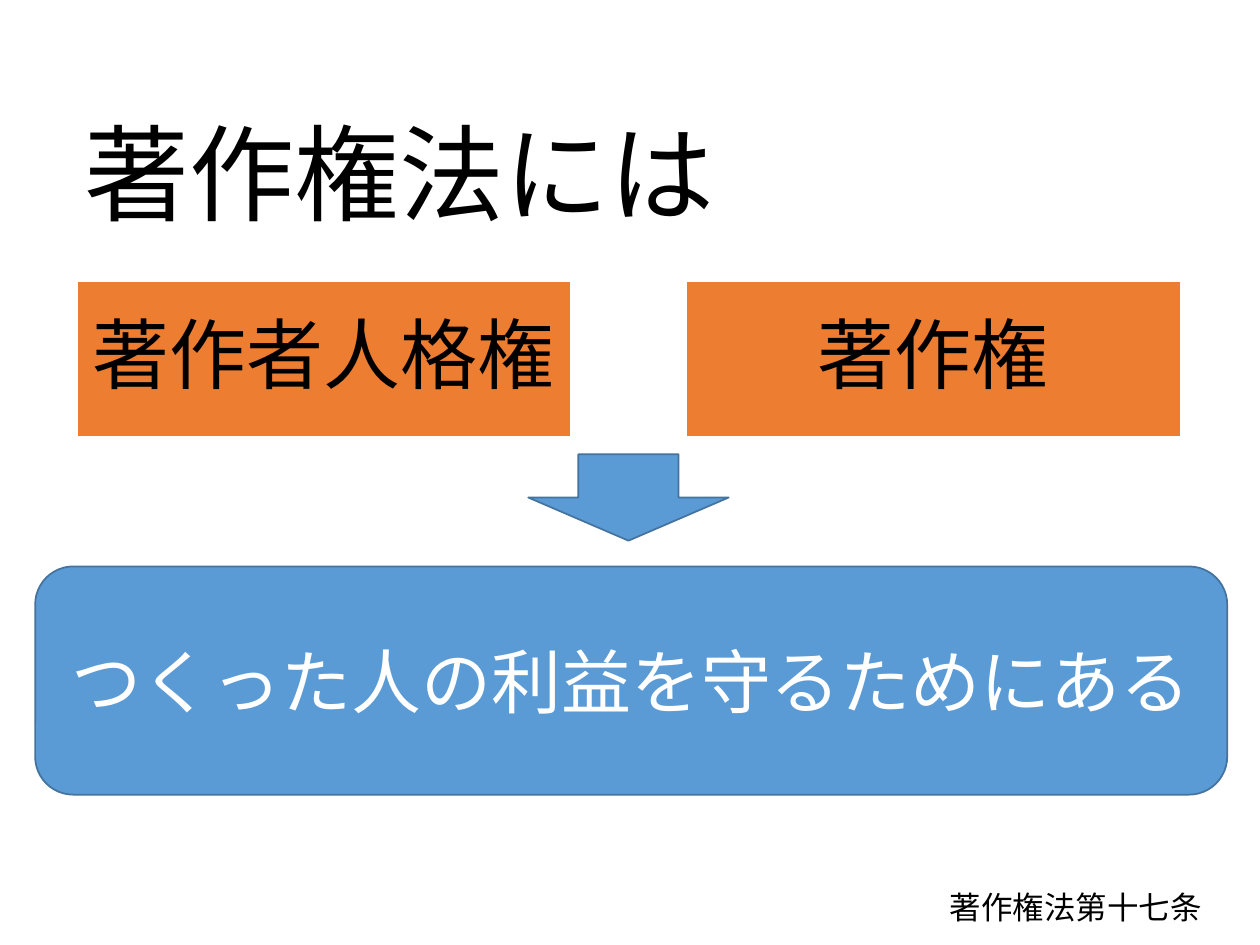
import pptx
import pptx.util
import pptx.dml.color
import pptx.enum.shapes
import pptx.enum.text

Cm = pptx.util.Cm
Pt = pptx.util.Pt
RGBColor = pptx.dml.color.RGBColor
MSO_SHAPE = pptx.enum.shapes.MSO_SHAPE
PP_ALIGN = pptx.enum.text.PP_ALIGN
MSO_ANCHOR = pptx.enum.text.MSO_ANCHOR

BLACK = RGBColor(0x00, 0x00, 0x00)
WHITE = RGBColor(0xFF, 0xFF, 0xFF)
ORANGE = RGBColor(0xED, 0x7D, 0x31)
BLUE = RGBColor(0x5B, 0x9B, 0xD5)
DARK_BLUE = RGBColor(0x43, 0x73, 0x9E)


def write(sp, text, size, color=BLACK, align=PP_ALIGN.CENTER,
          anchor=MSO_ANCHOR.MIDDLE, spacing=1.0):
    tf = sp.text_frame
    tf.word_wrap = True
    tf.vertical_anchor = anchor
    p = tf.paragraphs[0]
    p.alignment = align
    p.line_spacing = spacing
    r = p.add_run()
    r.text = text
    r.font.name = "Calibri"
    r.font.size = Pt(size)
    r.font.color.rgb = color


def add_filled(kind, left, top, width, height, fill, line, line_width):
    sp = s.shapes.add_shape(kind, Cm(left), Cm(top), Cm(width), Cm(height))
    sp.shadow.inherit = False
    sp.fill.solid()
    sp.fill.fore_color.rgb = fill
    sp.line.color.rgb = line
    sp.line.width = Pt(line_width)
    return sp


prs = pptx.Presentation()
prs.slide_width = Cm(25.4)
prs.slide_height = Cm(19.05)
s = prs.slides.add_slide(prs.slide_layouts[5])

# Title
title = s.shapes.title
title.left, title.top = Cm(1.45), Cm(1.78)
title.width, title.height = Cm(14.1), Cm(3.68)
write(title, "著作権法には", 60, align=PP_ALIGN.LEFT, spacing=0.9)

# The two kinds of rights
for i, right in enumerate(["著作者人格権", "著作権"]):
    sp = add_filled(MSO_SHAPE.RECTANGLE, 1.54 + i * 12.29, 5.65, 9.98, 3.17,
                    ORANGE, WHITE, 1.5)
    write(sp, right, 44, spacing=0.9)

# Their common purpose
add_filled(MSO_SHAPE.DOWN_ARROW, 10.65, 9.16, 4.04, 1.74, BLUE, DARK_BLUE, 1)
purpose = add_filled(MSO_SHAPE.ROUNDED_RECTANGLE, 0.71, 11.42, 24.03, 4.6,
                     BLUE, DARK_BLUE, 1)
write(purpose, "つくった人の利益を守るためにある", 40, color=WHITE)

# Cited article
article = s.shapes.add_textbox(Cm(18.9), Cm(17.78), Cm(5.84), Cm(1.03))
write(article, "著作権法第十七条", 18, align=PP_ALIGN.LEFT, anchor=MSO_ANCHOR.TOP)
article.text_frame.auto_size = pptx.enum.text.MSO_AUTO_SIZE.SHAPE_TO_FIT_TEXT

prs.save("out.pptx")
